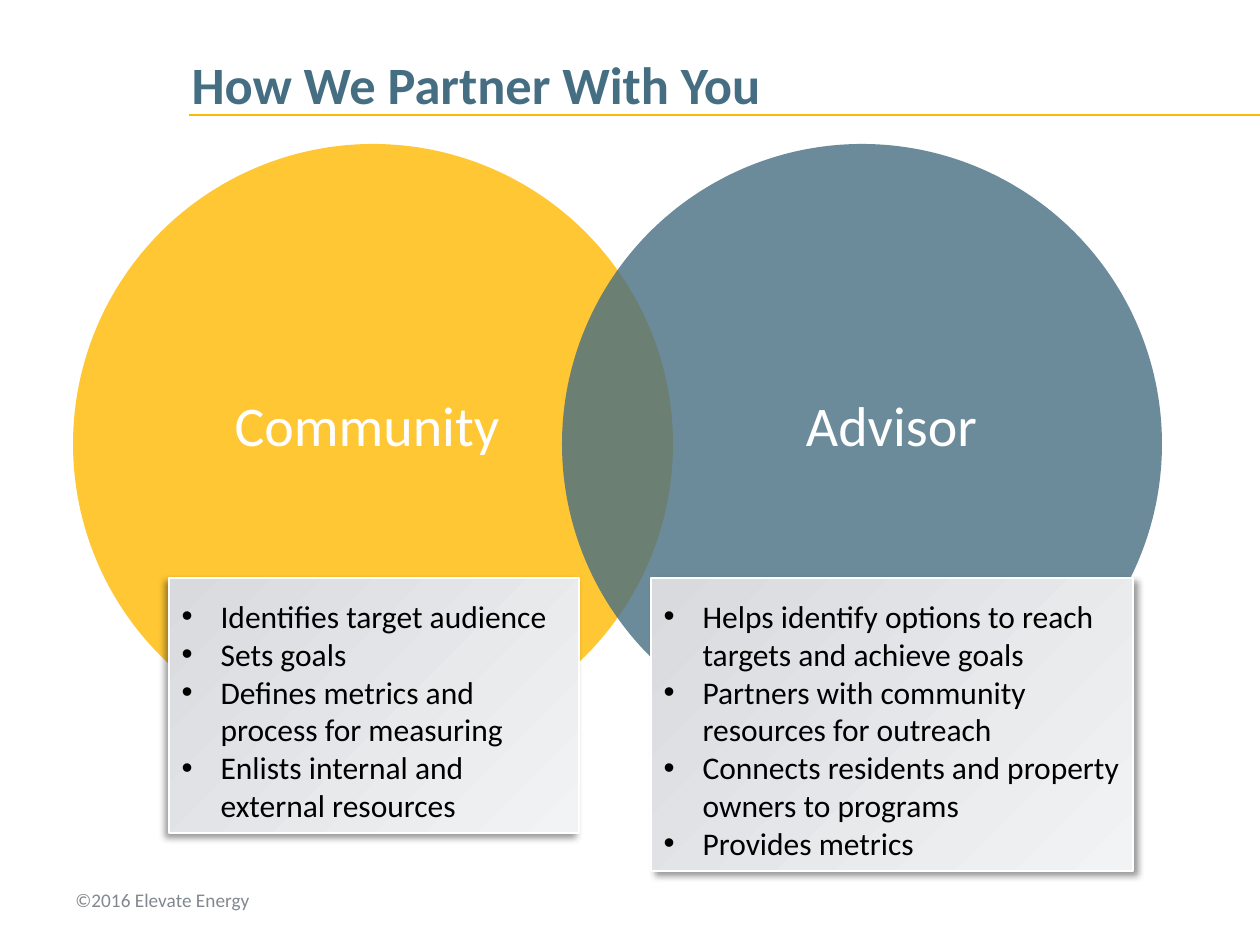
import pptx
import pptx.util
import pptx.dml.color
import pptx.enum.shapes
import pptx.enum.text
import pptx.oxml
import pptx.oxml.ns
import lxml.etree

PX = 914400 / 126
ALIGN = pptx.enum.text.PP_ALIGN
ANCHOR = pptx.enum.text.MSO_ANCHOR
OVAL = pptx.enum.shapes.MSO_SHAPE.OVAL
STRAIGHT = pptx.enum.shapes.MSO_CONNECTOR.STRAIGHT
GOLD, TEAL = "FFB901", "466E82"


def rgb(code):
    return pptx.dml.color.RGBColor.from_string(code)


def write(shape, lines, size, color, bold=False, align=ALIGN.LEFT,
          anchor=ANCHOR.TOP, top=6, bottom=6, bullet=False):
    """Fill a shape with one paragraph per line; insets are in px."""
    frame = shape.text_frame
    frame.word_wrap = True
    frame.auto_size = pptx.enum.text.MSO_AUTO_SIZE.NONE
    frame.vertical_anchor = anchor
    frame.margin_top, frame.margin_bottom = int(top * PX), int(bottom * PX)
    frame.text = "\n".join(lines)
    for para in frame.paragraphs:
        para.alignment = align
        para.space_before = pptx.util.Pt(0)
        if bullet:
            props = para._p.get_or_add_pPr()
            props.set("marL", str(int(39 * PX)))
            props.set("indent", str(int(-39 * PX)))
            mark = lxml.etree.SubElement(props, pptx.oxml.ns.qn("a:buChar"))
            mark.set("char", "•")
        para.font.name = "Calibri"
        para.font.size = pptx.util.Pt(size)
        para.font.bold = bold
        para.font.color.rgb = rgb(color)


deck = pptx.Presentation()
deck.slide_width, deck.slide_height = int(1260 * PX), int(945 * PX)
slide = deck.slides.add_slide(deck.slide_layouts[3])
shapes = slide.shapes

# Title and rule
title = shapes.title
title.left, title.top, title.width, title.height = [
    int(n * PX) for n in (179, 42, 1018, 73)]
write(title, ["How We Partner With You"], 30, TEAL, bold=True,
      anchor=ANCHOR.BOTTOM, bottom=0)

rule = shapes.add_connector(
    STRAIGHT, *[int(n * PX) for n in (189, 115, 1260, 115)])
rule.line.color.rgb = rgb(GOLD)
rule.line.width = pptx.util.Pt(1.5)
lxml.etree.SubElement(rule._element.spPr, pptx.oxml.ns.qn("a:effectLst"))

# Overlapping circles
for left, color in ((73, GOLD), (562, TEAL)):
    disc = shapes.add_shape(OVAL, *[int(n * PX) for n in (left, 144, 600, 600)])
    disc.shadow.inherit = False
    disc.fill.solid()
    disc.fill.fore_color.rgb = rgb(color)
    tint = disc._element.spPr.find(".//" + pptx.oxml.ns.qn("a:srgbClr"))
    lxml.etree.SubElement(tint, pptx.oxml.ns.qn("a:alpha")).set("val", "80000")
    disc.line.fill.background()

# Role lists: placeholder, left, width, height, shadow angle, lines
roles = [
    (1, 169, 410, 255, 135, [
        "Identifies target audience",
        "Sets goals",
        "Defines metrics and process for measuring",
        "Enlists internal and external resources"]),
    (2, 651, 482, 293, 45, [
        "Helps identify options to reach targets and achieve goals",
        "Partners with community resources for outreach",
        "Connects residents and property owners to programs",
        "Provides metrics"]),
]
for idx, left, width, height, angle, lines in roles:
    box = slide.placeholders[idx]
    box.left, box.top, box.width, box.height = [
        int(n * PX) for n in (left, 578, width, height)]
    box.fill.gradient()
    box.fill.gradient_angle = 315
    for stop, color in zip(box.fill.gradient_stops, ("D8DADD", "F2F3F4")):
        stop.color.rgb = rgb(color)
    box.line.color.rgb = rgb("FFFFFF")
    box.line.width = pptx.util.Pt(0.75)
    box.shadow.inherit = False
    effects = box._element.spPr.find(pptx.oxml.ns.qn("a:effectLst"))
    effects.append(pptx.oxml.parse_xml(
        f'<a:outerShdw {pptx.oxml.ns.nsdecls("a")} blurRad="50800" '
        f'dist="38100" dir="{angle * 60000}" rotWithShape="0">'
        '<a:srgbClr val="000000"><a:alpha val="40000"/></a:srgbClr>'
        '</a:outerShdw>'))
    write(box, lines, 18, "000000", top=19, bullet=True)
    shapes._spTree.append(box._element)  # in front of the circles

# Circle labels and footer
notes = [
    ("Community", 199, 384, 336, 81, 32, "FFFFFF", ALIGN.CENTER),
    ("Advisor", 718, 384, 347, 81, 32, "FFFFFF", ALIGN.CENTER),
    ("©2016 Elevate Energy", 63, 882, 315, 37, 11, "81888F", ALIGN.LEFT),
]
for text, left, top, width, height, size, color, align in notes:
    label = shapes.add_textbox(
        *[int(n * PX) for n in (left, top, width, height)])
    write(label, [text], size, color, align=align)

deck.save("out.pptx")
